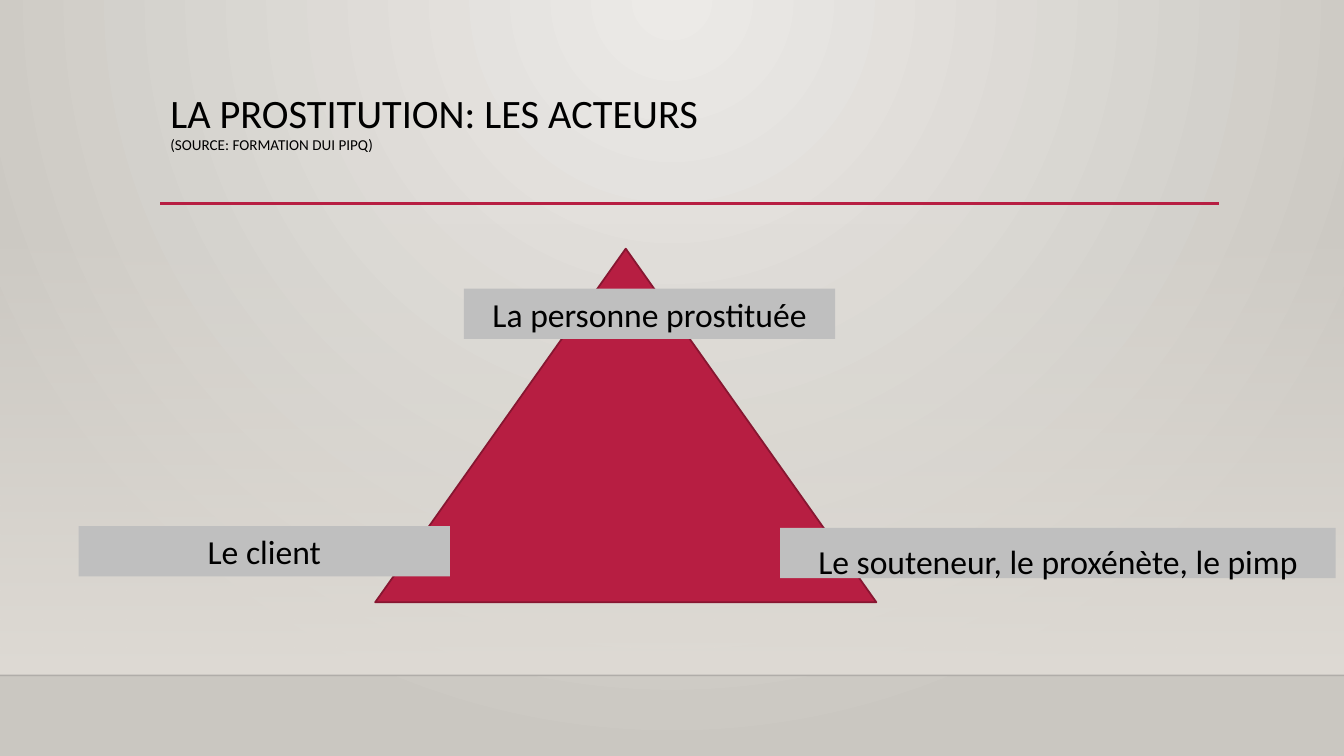
"""Build the slide on the three actors, set around a triangle."""
from lxml.etree import SubElement
from pptx import Presentation
from pptx.dml.color import RGBColor
from pptx.enum.shapes import MSO_CONNECTOR, MSO_SHAPE
from pptx.enum.text import MSO_ANCHOR, MSO_AUTO_SIZE, PP_ALIGN
from pptx.oxml import parse_xml
from pptx.oxml.ns import nsdecls, qn
from pptx.util import Pt

THEME = {
    "font": "Calibri", "head": 28.8, "source": 10.8, "label": 24,
    "ink": "000000", "red": "B71E42", "edge": "871631", "grey": "BFBFBF",
    "light": "ECEAE7", "dark": "CAC7C1", "wall": "DFDBD5", "floor": "000001",
}
WIDE, HIGH = 960, 540
HEAD = ("LA PROSTITUTION: LES ACTEURS", (114.5, 63.4, 756, 82.8))
SOURCE = "(SOURCE: FORMATION DUI PIPQ)"
LABELS = [
    ("La personne prostituée", (331.4, 206.2, 265.2, 36)),
    ("Le client", (56.2, 375.8, 265.2, 36)),
]
PIMP = ("Le souteneur, le proxénète, le pimp", (557.3, 377, 396.8, 36))
PEAK = (268, 177.6, 358, 252.6)
WALL = (0, 159, WIDE, 323.4)
LINES = [
    (0, WIDE, 482.4, "floor", 1, 20),
    (114.5, 871, 145.3, "red", 2.5, 100),
]


def tint(name):
    return RGBColor.from_string(THEME[name])


def blend(stops, way):
    marks = "".join(
        f'<a:gs pos="{pos}"><a:srgbClr val="{THEME[name]}">'
        f'<a:alpha val="{alpha}"/></a:srgbClr></a:gs>'
        for pos, name, alpha in stops)
    return parse_xml(f'<a:gradFill {nsdecls("a")} rotWithShape="1">'
                     f'<a:gsLst>{marks}</a:gsLst>{way}</a:gradFill>')


def swap(root, fill):
    old = root.find(qn("a:solidFill"))
    old.getparent().replace(old, fill)


def place(shape, box):
    shape.left, shape.top, shape.width, shape.height = map(Pt, box)
    shape.element.getparent().append(shape.element)


def draw(shapes, kind, box, fill):
    shape = shapes.add_shape(kind, *map(Pt, box))
    shape.shadow.inherit = False
    shape.fill.solid()
    shape.fill.fore_color.rgb = tint(fill)
    shape.line.fill.background()
    return shape


def style(font, size):
    font.name, font.size = THEME["font"], Pt(THEME[size])
    font.color.rgb = tint("ink")


def fit(shape, anchor):
    frame = shape.text_frame
    frame.word_wrap = True
    frame.auto_size = MSO_AUTO_SIZE.NONE
    frame.vertical_anchor = anchor
    return frame.paragraphs[0]


def write(shape, text, anchor):
    para = fit(shape, anchor)
    para.text = text
    para.alignment = PP_ALIGN.CENTER
    style(para.font, "label")
    return para


def rule(shapes, left, right, top, color, weight, alpha):
    line = shapes.add_connector(
        MSO_CONNECTOR.STRAIGHT, Pt(left), Pt(top), Pt(right), Pt(top))
    line.line.width = Pt(weight)
    line.line.color.rgb = tint(color)
    props = line.element.spPr
    SubElement(props, qn("a:effectLst"))
    if alpha < 100:
        shade = props.find(".//" + qn("a:srgbClr"))
        SubElement(shade, qn("a:alpha")).set("val", str(alpha * 1000))


def main():
    deck = Presentation()
    deck.slide_width, deck.slide_height = Pt(WIDE), Pt(HIGH)
    slide = deck.slides.add_slide(deck.slide_layouts[1])
    shapes = slide.shapes
    title, body = slide.placeholders

    slide.background.fill.solid()
    swap(slide.element.find(".//" + qn("p:bgPr")), blend(
        [(0, "light", 100000), (100000, "dark", 100000)],
        '<a:path path="circle"><a:fillToRect l="43000" t="0" r="43000"'
        ' b="100000"/></a:path>'))
    wall = draw(shapes, MSO_SHAPE.RECTANGLE, WALL, "wall")
    swap(wall.element.spPr, blend(
        [(0, "wall", 0), (100000, "wall", 100000)],
        '<a:lin ang="5400000" scaled="0"/>'))
    for line in LINES:
        rule(shapes, *line)

    text, box = HEAD
    place(title, box)
    para = fit(title, MSO_ANCHOR.TOP)
    para.alignment, para.line_spacing = PP_ALIGN.LEFT, 0.9
    for part, size in ((text, "head"), (SOURCE, "source")):
        if para.runs:
            para.add_line_break()
        run = para.add_run()
        run.text = part
        style(run.font, size)

    peak = draw(shapes, MSO_SHAPE.ISOSCELES_TRIANGLE, PEAK, "red")
    peak.line.color.rgb = tint("edge")
    peak.line.width = Pt(1.25)
    for text, box in LABELS:
        label = draw(shapes, MSO_SHAPE.RECTANGLE, box, "grey")
        write(label, text, MSO_ANCHOR.MIDDLE)

    text, box = PIMP
    place(body, box)
    body.fill.solid()
    body.fill.fore_color.rgb = tint("grey")
    first = body.text_frame.paragraphs[0]
    props = first._p.get_or_add_pPr()
    props.set("marL", "0")
    props.set("indent", "0")
    SubElement(props, qn("a:buNone"))
    para = write(body, text, MSO_ANCHOR.TOP)
    para.line_spacing, para.space_before = 1.2, Pt(0)

    deck.save("out.pptx")


if __name__ == "__main__":
    main()
